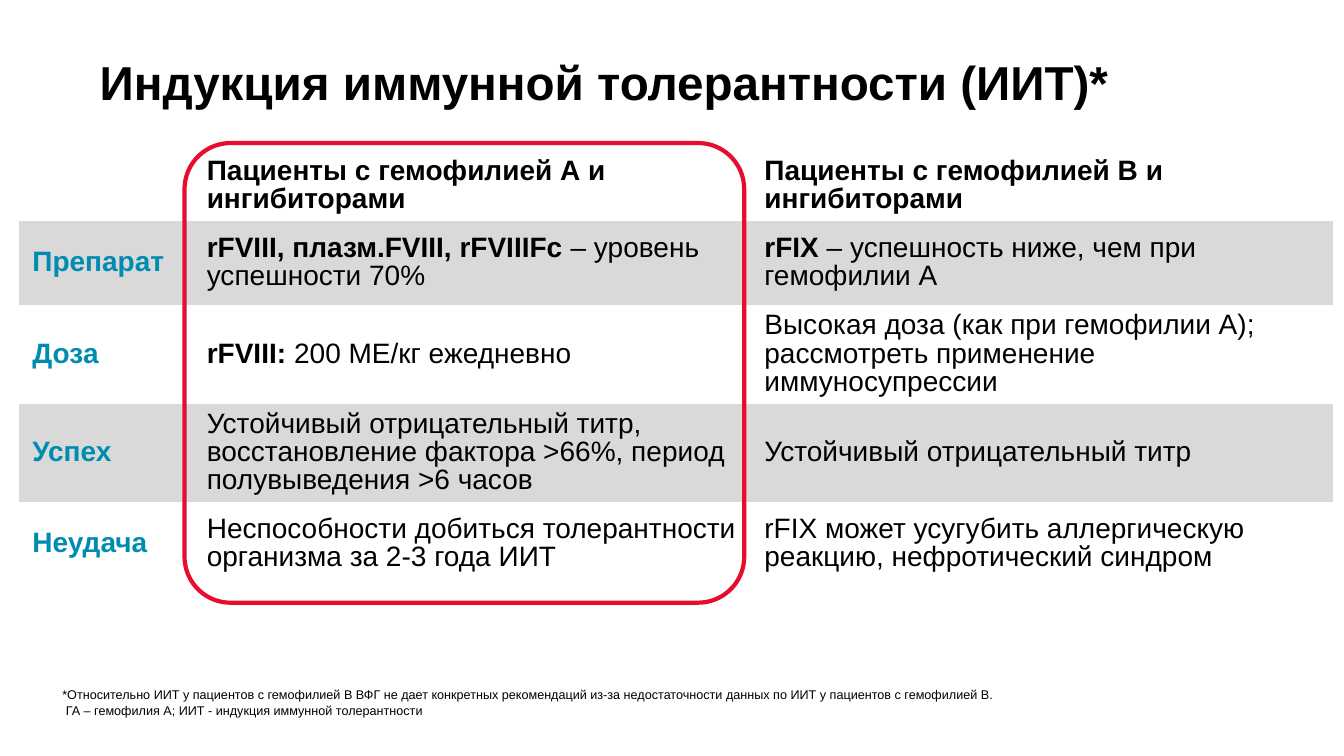
from pptx import Presentation
from pptx.dml.color import RGBColor
from pptx.enum.shapes import MSO_SHAPE as Shape
from pptx.enum.text import MSO_ANCHOR as Anchor
from pptx.oxml.ns import qn
from pptx.util import Inches, Pt

COLORS = {"text": "000000", "label": "008BB0", "band": "D9D9D9",
          "plain": "FFFFFF", "frame": "E60D2E"}
NO_GRID_STYLE = "{2D5ABB26-0587-4C30-8999-92F81FD0307C}"

deck = Presentation()
deck.slide_width, deck.slide_height = Inches(13.33), Inches(7.5)
page = deck.slides.add_slide(deck.slide_layouts[6])


def share(*percents):
    """Turn alternating width and height percentages into slide lengths."""
    sides = (deck.slide_width, deck.slide_height) * 2
    return [int(side * percent / 100) for side, percent in zip(sides, percents)]


def write(frame, paragraphs, size, color, spacing):
    """Fill a frame with paragraphs, each a pair of bold and regular text."""
    for index, parts in enumerate(paragraphs):
        para = frame.add_paragraph() if index else frame.paragraphs[0]
        para.line_spacing = spacing
        for text, bold in zip(parts, (True, False)):
            if text:
                span = para.add_run()
                span.text = text
                span.font.name, span.font.size, span.font.bold = "Arial", Pt(size), bold
                span.font.color.rgb = RGBColor.from_string(COLORS[color])


# Each cell lists its paragraphs as (bold, regular)
ROWS = [
    [[],
     [("Пациенты с гемофилией А и ингибиторами", "")],
     [("Пациенты с гемофилией В и ингибиторами", "")]],
    [[("Препарат", "")],
     [("rFVIII, плазм.FVIII, rFVIIIFc", " – уровень успешности 70%")],
     [("rFIX", " – успешность ниже, чем при гемофилии А")]],
    [[("Доза", "")],
     [("rFVIII: ", "200 МЕ/кг ежедневно")],
     [("", "Высокая доза (как при гемофилии А);"),
      ("", "рассмотреть применение иммуносупрессии")]],
    [[("Успех", "")],
     [("", "Устойчивый отрицательный титр,"),
      ("", "восстановление фактора >66%, период полувыведения >6 часов")],
     [("", "Устойчивый отрицательный титр")]],
    [[("Неудача", "")],
     [("", "Неспособности добиться толерантности организма за 2-3 года ИИТ")],
     [("", "rFIX может усугубить аллергическую реакцию, нефротический синдром")]],
]
COLUMN_SHARES = (12.98, 41.49, 43.29)
HEADER_SHARE, BODY_SHARE = 10.27, 11.2
TABLE_TOP = 18.93

table_height = HEADER_SHARE + BODY_SHARE * (len(ROWS) - 1)
table = page.shapes.add_table(
    len(ROWS), len(COLUMN_SHARES),
    *share(1.43, TABLE_TOP, sum(COLUMN_SHARES), table_height)).table
table._tbl.tblPr.find(qn("a:tableStyleId")).text = NO_GRID_STYLE
for column, width in zip(table.columns, COLUMN_SHARES):
    column.width = share(width)[0]
margin_x, margin_y = share(0.98, 0.93)
for r, row in enumerate(ROWS):
    table.rows[r].height = share(0, BODY_SHARE if r else HEADER_SHARE)[1]
    for c, paragraphs in enumerate(row):
        cell = table.cell(r, c)
        cell.fill.solid()
        cell.fill.fore_color.rgb = RGBColor.from_string(COLORS["band" if r % 2 else "plain"])
        cell.margin_left = cell.margin_right = margin_x
        cell.margin_top = cell.margin_bottom = margin_y
        cell.vertical_anchor = Anchor.MIDDLE if r else Anchor.BOTTOM
        write(cell.text_frame, paragraphs, 20, "text" if c else "label", 0.9)

footnote = page.shapes.add_textbox(*share(3.9, 89.6, 81.4, 5.33)).text_frame
footnote.word_wrap = True
footnote.vertical_anchor = Anchor.BOTTOM
footnote.margin_bottom = 0
write(footnote, [
    ("", "*Относительно ИИТ у пациентов с гемофилией В ВФГ не дает конкретных "
         "рекомендаций из-за недостаточности данных по ИИТ у пациентов с гемофилией В."),
    ("", " ГА – гемофилия А; ИИТ - индукция иммунной толерантности"),
], 9, "text", 1.0)

frame = page.shapes.add_shape(Shape.ROUNDED_RECTANGLE, *share(13.73, TABLE_TOP, 41.64, 60.8))
frame.adjustments[0] = 0.1
frame.shadow.inherit = False
frame.fill.background()
frame.line.color.rgb = RGBColor.from_string(COLORS["frame"])
frame.line.width = Pt(3)

title = page.shapes.add_textbox(*share(6.68, 3.33, 86.27, 15.87)).text_frame
title.word_wrap = True
title.vertical_anchor = Anchor.MIDDLE
write(title, [("Индукция иммунной толерантности (ИИТ)*", "")], 34, "text", 0.9)

deck.save("out.pptx")
